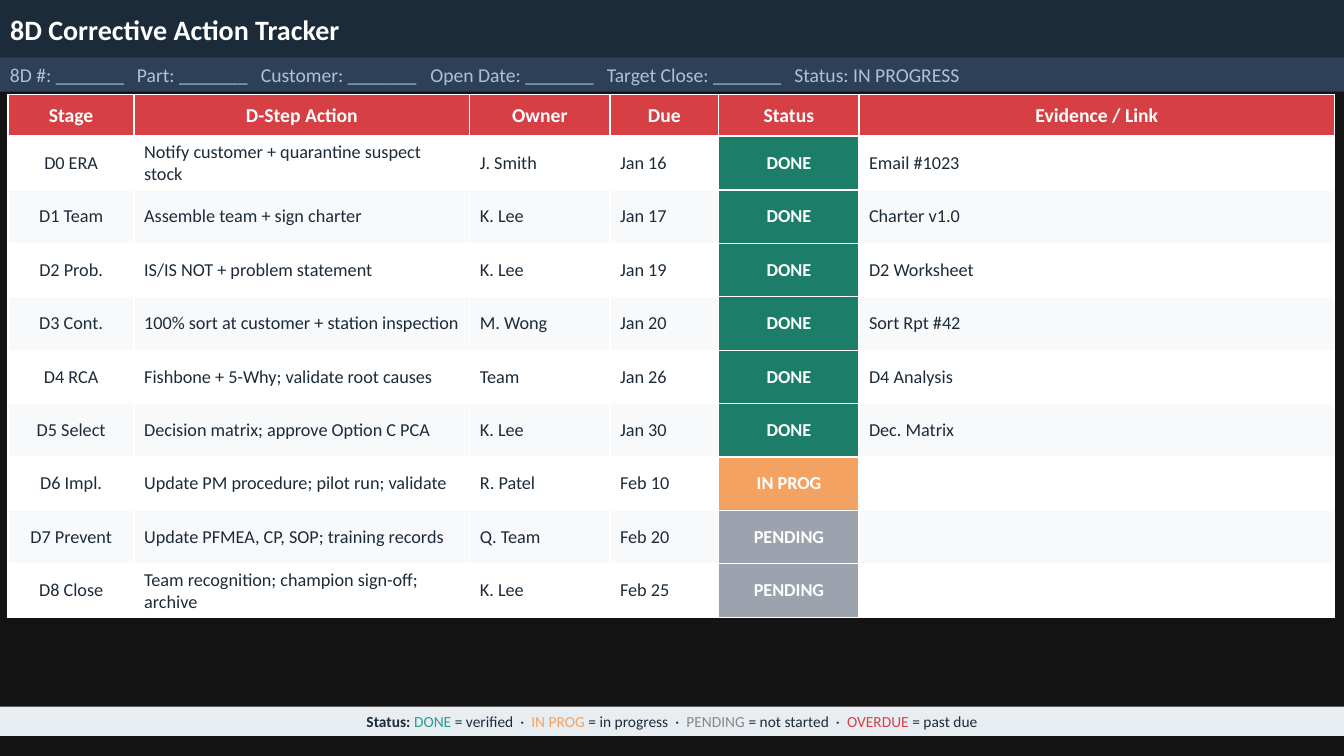
"""Build the 8D corrective action tracker slide."""
from lxml.etree import SubElement
from pptx import Presentation
from pptx.dml.color import RGBColor
from pptx.enum.shapes import MSO_SHAPE
from pptx.enum.text import MSO_ANCHOR, MSO_AUTO_SIZE, PP_ALIGN
from pptx.oxml.ns import qn
from pptx.util import Inches, Pt

BACKDROP = RGBColor(0x13, 0x13, 0x13)
NAVY = RGBColor(0x1C, 0x2B, 0x3A)
SLATE = RGBColor(0x2E, 0x40, 0x57)
PALE_BLUE = RGBColor(0xA8, 0xC4, 0xD8)
MIST = RGBColor(0xE8, 0xED, 0xF2)
WHITE = RGBColor(0xFF, 0xFF, 0xFF)
BAND = RGBColor(0xF8, 0xF9, 0xFA)
RED = RGBColor(0xD6, 0x40, 0x45)
GREEN = RGBColor(0x1C, 0x7D, 0x68)
TEAL = RGBColor(0x2A, 0x9D, 0x8F)
ORANGE = RGBColor(0xF4, 0xA2, 0x61)
SILVER = RGBColor(0x9C, 0xA3, 0xAF)
GRAY = RGBColor(0x88, 0x88, 0x88)

STATUS_FILLS = {"DONE": GREEN, "IN PROG": ORANGE, "PENDING": SILVER}
FIELDS = ["8D #: _______", "Part: _______", "Customer: _______",
          "Open Date: _______", "Target Close: _______", "Status: IN PROGRESS"]
FIELD_STOPS = [1.26, 2.49, 4.17, 5.92, 7.78]
COLUMN_WIDTHS = [1.25, 3.33, 1.39, 1.08, 1.39, 4.72]
HEADERS = ["Stage", "D-Step Action", "Owner", "Due", "Status", "Evidence / Link"]
STEPS = [
    ["D0 ERA", "Notify customer + quarantine suspect stock", "J. Smith", "Jan 16", "DONE", "Email #1023"],
    ["D1 Team", "Assemble team + sign charter", "K. Lee", "Jan 17", "DONE", "Charter v1.0"],
    ["D2 Prob.", "IS/IS NOT + problem statement", "K. Lee", "Jan 19", "DONE", "D2 Worksheet"],
    ["D3 Cont.", "100% sort at customer + station inspection", "M. Wong", "Jan 20", "DONE", "Sort Rpt #42"],
    ["D4 RCA", "Fishbone + 5-Why; validate root causes", "Team", "Jan 26", "DONE", "D4 Analysis"],
    ["D5 Select", "Decision matrix; approve Option C PCA", "K. Lee", "Jan 30", "DONE", "Dec. Matrix"],
    ["D6 Impl.", "Update PM procedure; pilot run; validate", "R. Patel", "Feb 10", "IN PROG", ""],
    ["D7 Prevent", "Update PFMEA, CP, SOP; training records", "Q. Team", "Feb 20", "PENDING", ""],
    ["D8 Close", "Team recognition; champion sign-off; archive", "K. Lee", "Feb 25", "PENDING", ""],
]
LEGEND = [("DONE", TEAL, " = verified  ·  "), ("IN PROG", ORANGE, " = in progress  ·  "),
          ("PENDING", GRAY, " = not started  ·  "), ("OVERDUE", RED, " = past due")]


class TrackerPage:
    """Holds the slide and its style, and draws each kind of element."""

    def __init__(self, deck, font_name="Calibri"):
        self.font_name = font_name
        self.width = 13.33
        deck.slide_width, deck.slide_height = Inches(self.width), Inches(7.5)
        self.page = deck.slides.add_slide(deck.slide_layouts[5])
        self.page.background.fill.solid()
        self.page.background.fill.fore_color.rgb = BACKDROP

    def style(self, span, size, color, bold=False):
        font = span.font
        font.name, font.size, font.bold = self.font_name, Pt(size), bold
        font.color.rgb = color

    def fit_bar(self, box, top, height, fill, align):
        box.left, box.top = Inches(0), Inches(top)
        box.width, box.height = Inches(self.width), Inches(height)
        box.fill.solid()
        box.fill.fore_color.rgb = fill
        box.line.fill.background()
        frame = box.text_frame
        frame.word_wrap = True
        frame.auto_size = MSO_AUTO_SIZE.SHAPE_TO_FIT_TEXT
        frame.vertical_anchor = MSO_ANCHOR.MIDDLE
        para = frame.paragraphs[0]
        para.alignment = align
        return para

    def title(self, text, top, height):
        para = self.fit_bar(self.page.shapes.title, top, height, NAVY, PP_ALIGN.LEFT)
        para.text = text
        self.style(para.runs[0], 20, WHITE, True)

    def bar(self, top, height, fill, align):
        box = self.page.shapes.add_shape(
            MSO_SHAPE.RECTANGLE, Inches(0), Inches(top), Inches(self.width), Inches(height))
        box.shadow.inherit = False
        return self.fit_bar(box, top, height, fill, align)

    def fields(self, names, stops, top, height):
        para = self.bar(top, height, SLATE, PP_ALIGN.LEFT)
        tabs = SubElement(para._p.get_or_add_pPr(), qn("a:tabLst"))
        for stop in stops:
            SubElement(tabs, qn("a:tab"), pos=str(Inches(stop)), algn="l")
        para.text = "\t".join(names)
        self.style(para.runs[0], 14, PALE_BLUE)

    def legend(self, entries, top, height):
        para = self.bar(top, height, MIST, PP_ALIGN.CENTER)
        pieces = [("Status: ", NAVY, True)]
        for name, color, meaning in entries:
            pieces += [(name, color, False), (meaning, NAVY, False)]
        for text, color, bold in pieces:
            span = para.add_run()
            span.text = text
            self.style(span, 11, color, bold)

    def cell(self, cell, text, fill, size, color, bold, centered):
        cell.fill.solid()
        cell.fill.fore_color.rgb = fill
        cell.vertical_anchor = MSO_ANCHOR.MIDDLE
        para = cell.text_frame.paragraphs[0]
        para.alignment = PP_ALIGN.CENTER if centered else PP_ALIGN.LEFT
        if text:
            para.text = text
            self.style(para.runs[0], size, color, bold)

    def table(self, headers, steps, left, top):
        table = self.page.shapes.add_table(
            len(steps) + 1, len(headers), Inches(left), Inches(top),
            Inches(sum(COLUMN_WIDTHS)), Inches(5.18)).table
        for column, width in zip(table.columns, COLUMN_WIDTHS):
            column.width = Inches(width)
        for index, row in enumerate(table.rows):
            row.height = Inches(0.53 if index else 0.41)
        for column, text in enumerate(headers):
            self.cell(table.cell(0, column), text, RED, 14, WHITE, True, True)
        for row, step in enumerate(steps, 1):
            band = WHITE if row % 2 else BAND
            for column, text in enumerate(step):
                header = headers[column]
                is_status = header == "Status"
                self.cell(table.cell(row, column), text,
                          STATUS_FILLS[text] if is_status else band, 13,
                          WHITE if is_status else NAVY, is_status,
                          header in ("Stage", "Status"))


def main():
    deck = Presentation()
    tracker = TrackerPage(deck)
    tracker.title("8D Corrective Action Tracker", 0.07, 0.44)
    tracker.fields(FIELDS, FIELD_STOPS, 0.57, 0.34)
    tracker.table(HEADERS, STEPS, 0.08, 0.94)
    tracker.legend(LEGEND, 7.01, 0.29)
    deck.save("out.pptx")


if __name__ == "__main__":
    main()
